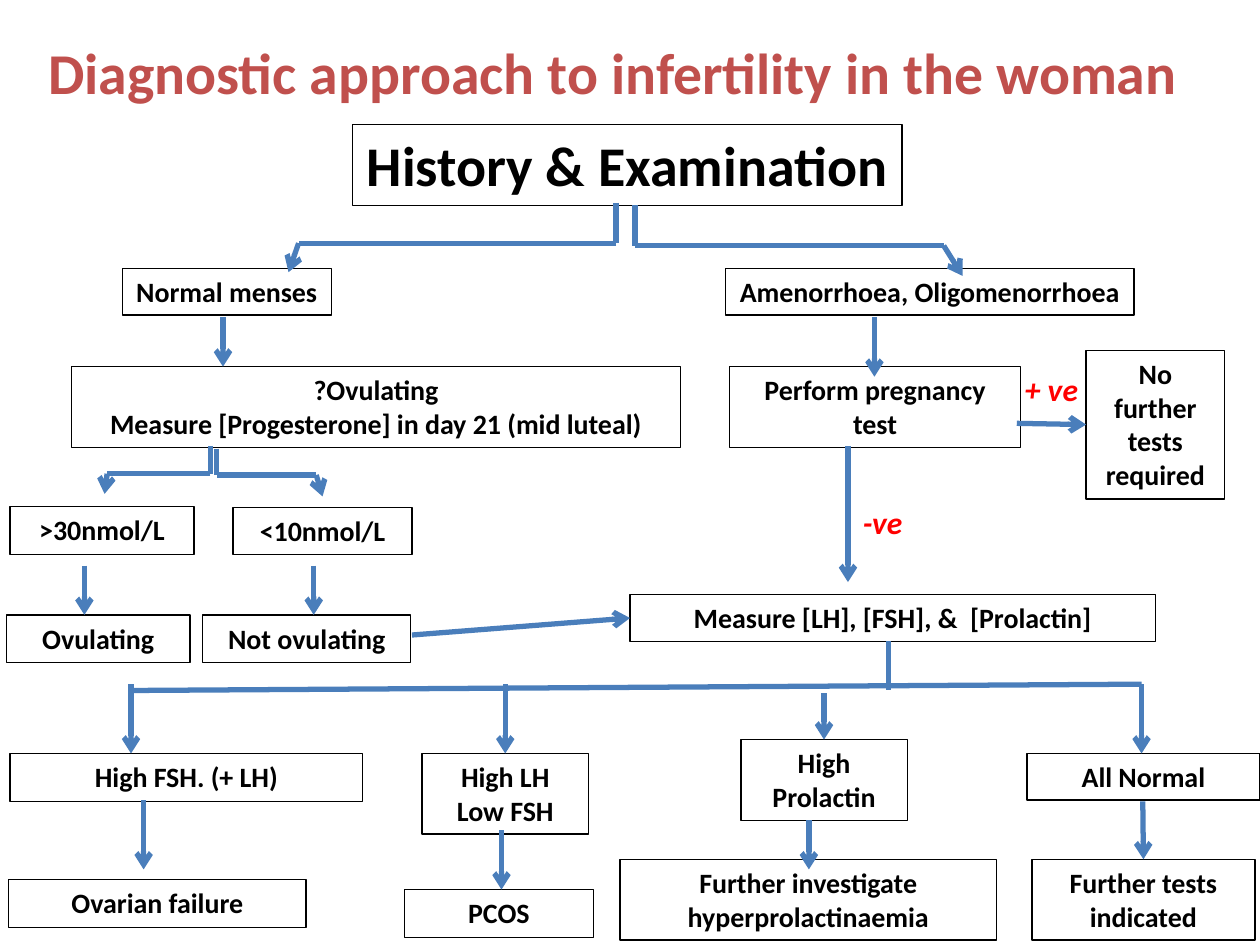
from pptx import Presentation
from pptx.dml.color import RGBColor
from pptx.enum.shapes import MSO_CONNECTOR, MSO_SHAPE
from pptx.enum.text import MSO_ANCHOR, MSO_AUTO_SIZE, PP_ALIGN
from pptx.oxml.ns import qn
from pptx.util import Inches, Pt
from lxml.etree import SubElement

BLACK = RGBColor(0x00, 0x00, 0x00)
RED = RGBColor(0xFF, 0x00, 0x00)
TITLE_RED = RGBColor(0xC0, 0x50, 0x4D)
BLUE = RGBColor(0x4A, 0x7E, 0xBB)

TOP, LEFT, BOTTOM, RIGHT = range(4)

TITLE = "Diagnostic approach to infertility in the woman"
TITLE_FORMAT = {"size": Pt(33), "bold": True}
HEADING_FORMAT = {"size": Pt(32), "bold": True}
BOX_FORMAT = {"size": Pt(16), "bold": True}
RESULT_FORMAT = {"size": Pt(18), "bold": True, "italic": True}

# Boxes: key, paragraphs, (left, top, width, height)
BOXES = [
    ("history", ["History & Examination"], (2.8, 0.99, 4.36, 0.64)),
    ("amenorrhoea", ["Amenorrhoea, Oligomenorrhoea"], (5.76, 2.13, 3.24, 0.37)),
    ("menses", ["Normal menses"], (0.97, 2.13, 1.66, 0.37)),
    ("progesterone",
     ["?Ovulating", "Measure [Progesterone] in day 21 (mid luteal)"],
     (0.57, 2.91, 4.83, 0.64)),
    ("pregnancy", ["Perform pregnancy test"], (5.79, 2.91, 2.31, 0.64)),
    ("no tests", ["No further tests required"], (8.62, 2.78, 1.1, 1.18)),
    ("above 30", [">30nmol/L"], (0.08, 4.02, 1.46, 0.38)),
    ("below 10", ["<10nmol/L"], (1.85, 4.03, 1.42, 0.37)),
    ("ovulating", ["Ovulating"], (0.05, 4.88, 1.46, 0.38)),
    ("not ovulating", ["Not ovulating"], (1.61, 4.88, 1.65, 0.38)),
    ("hormones", ["Measure [LH], [FSH], &  [Prolactin]"], (5, 4.72, 4.17, 0.37)),
    ("high FSH", ["High FSH. (+ LH)"], (0.08, 5.98, 2.8, 0.38)),
    ("high LH", ["High LH", "Low FSH"], (3.35, 5.98, 1.32, 0.64)),
    ("high prolactin", ["High Prolactin"], (5.88, 5.87, 1.32, 0.64)),
    ("all normal", ["All Normal"], (8.15, 5.98, 1.85, 0.37)),
    ("ovarian failure", ["Ovarian failure"], (0.07, 6.98, 2.36, 0.38)),
    ("PCOS", ["PCOS"], (3.21, 7.06, 1.5, 0.38)),
    ("hyperprolactinaemia", ["Further investigate hyperprolactinaemia"],
     (4.92, 6.82, 2.99, 0.64)),
    ("further tests", ["Further tests indicated"], (8.19, 6.82, 1.77, 0.64)),
]
UNWRAPPED = {"history", "amenorrhoea", "menses"}

RESULTS = [
    ("+ ve", (7.99, 2.89, 0.71, 0.4)),
    ("-ve", (6.65, 3.94, 0.71, 0.4)),
]

# Branches: corner points, with the arrowhead on the last segment
BRANCHES = [
    [(4.89, 1.61), (4.89, 1.93), (2.37, 1.93), (2.29, 2.16)],
    [(5.04, 1.63), (5.04, 1.95), (7.49, 1.95), (7.64, 2.19)],
    [(1.67, 3.54), (1.67, 3.76), (0.85, 3.76), (0.83, 3.92)],
    [(1.72, 3.56), (1.72, 3.77), (2.51, 3.77), (2.56, 3.94)],
]

# Arrows: start point, then an end point or a (box, side) pair
ARROWS = [
    ((1.77, 2.52), (1.77, 2.91)),
    ((6.94, 2.52), (6.94, 2.99)),
    ((8.07, 3.36), ("no tests", LEFT)),
    ((6.73, 3.54), (6.73, 4.62)),
    ((0.67, 4.49), (0.67, 4.88)),
    ((2.49, 4.49), (2.49, 4.88)),
    ((3.27, 5.04), ("hormones", LEFT)),
    ((1.04, 5.43), (1.04, 5.98)),
    ((4.01, 5.43), ("high LH", TOP)),
    ((6.54, 5.5), ("high prolactin", TOP)),
    ((9.06, 5.43), (9.06, 5.98)),
    ((1.14, 6.35), (1.14, 6.9)),
    ((3.98, 6.59), (3.98, 7.06)),
    ((6.42, 6.51), (6.42, 6.9)),
    ((9.07, 6.36), ("further tests", TOP)),
]

# Plain lines: the bar over the four outcomes and the stem down to it
LINES = [
    ((1.06, 5.48), (9.06, 5.43)),
    ((7.05, 5.09), (7.05, 5.48)),
]


def write_text(shape, paragraphs, format_values, color, wrap=True,
               auto_size=MSO_AUTO_SIZE.SHAPE_TO_FIT_TEXT):
    frame = shape.text_frame
    frame.word_wrap = wrap
    frame.auto_size = auto_size
    frame.vertical_anchor = MSO_ANCHOR.TOP
    frame.text = "\n".join(paragraphs)
    for paragraph in frame.paragraphs:
        paragraph.alignment = PP_ALIGN.CENTER
        font = paragraph.runs[0].font
        font.name = "Calibri"
        font.color.rgb = color
        for attribute, value in format_values.items():
            setattr(font, attribute, value)


def add_box(slide, key, paragraphs, place):
    shape = slide.shapes.add_shape(MSO_SHAPE.RECTANGLE, *map(Inches, place))
    shape.shadow.inherit = False
    shape.fill.background()
    shape.line.color.rgb = BLACK
    shape.line.width = Pt(0.75)
    format_values = HEADING_FORMAT if key == "history" else BOX_FORMAT
    write_text(shape, paragraphs, format_values, BLACK, key not in UNWRAPPED)
    return shape


def add_line(slide, boxes, start, end, arrow=False):
    joined = end[0] in boxes
    last_point = start if joined else end
    connector = slide.shapes.add_connector(
        MSO_CONNECTOR.STRAIGHT, *map(Inches, start + last_point))
    if joined:
        connector.end_connect(boxes[end[0]], end[1])
    connector.line.color.rgb = BLUE
    connector.line.width = Pt(3)
    properties = connector._element.spPr
    if arrow:
        SubElement(properties.find(qn("a:ln")), qn("a:tailEnd"), type="arrow")
    SubElement(properties, qn("a:effectLst"))


def main():
    presentation = Presentation()
    presentation.slide_width, presentation.slide_height = Inches(10), Inches(7.5)
    slide = presentation.slides.add_slide(presentation.slide_layouts[5])

    # Title
    title = slide.shapes.title
    title.left, title.top, title.width, title.height = map(
        Inches, (0, 0.24, 9.73, 0.84))
    write_text(title, [TITLE], TITLE_FORMAT, TITLE_RED,
               auto_size=MSO_AUTO_SIZE.NONE)

    # Boxes and test results
    boxes = {key: add_box(slide, key, paragraphs, place)
             for key, paragraphs, place in BOXES}
    for text, place in RESULTS:
        label = slide.shapes.add_textbox(*map(Inches, place))
        write_text(label, [text], RESULT_FORMAT, RED)

    # Branches, arrows and lines
    for points in BRANCHES:
        for start, end in zip(points, points[1:]):
            add_line(slide, boxes, start, end, arrow=end == points[-1])
    for start, end in ARROWS:
        add_line(slide, boxes, start, end, arrow=True)
    for start, end in LINES:
        add_line(slide, boxes, start, end)

    presentation.save("out.pptx")


if __name__ == "__main__":
    main()
